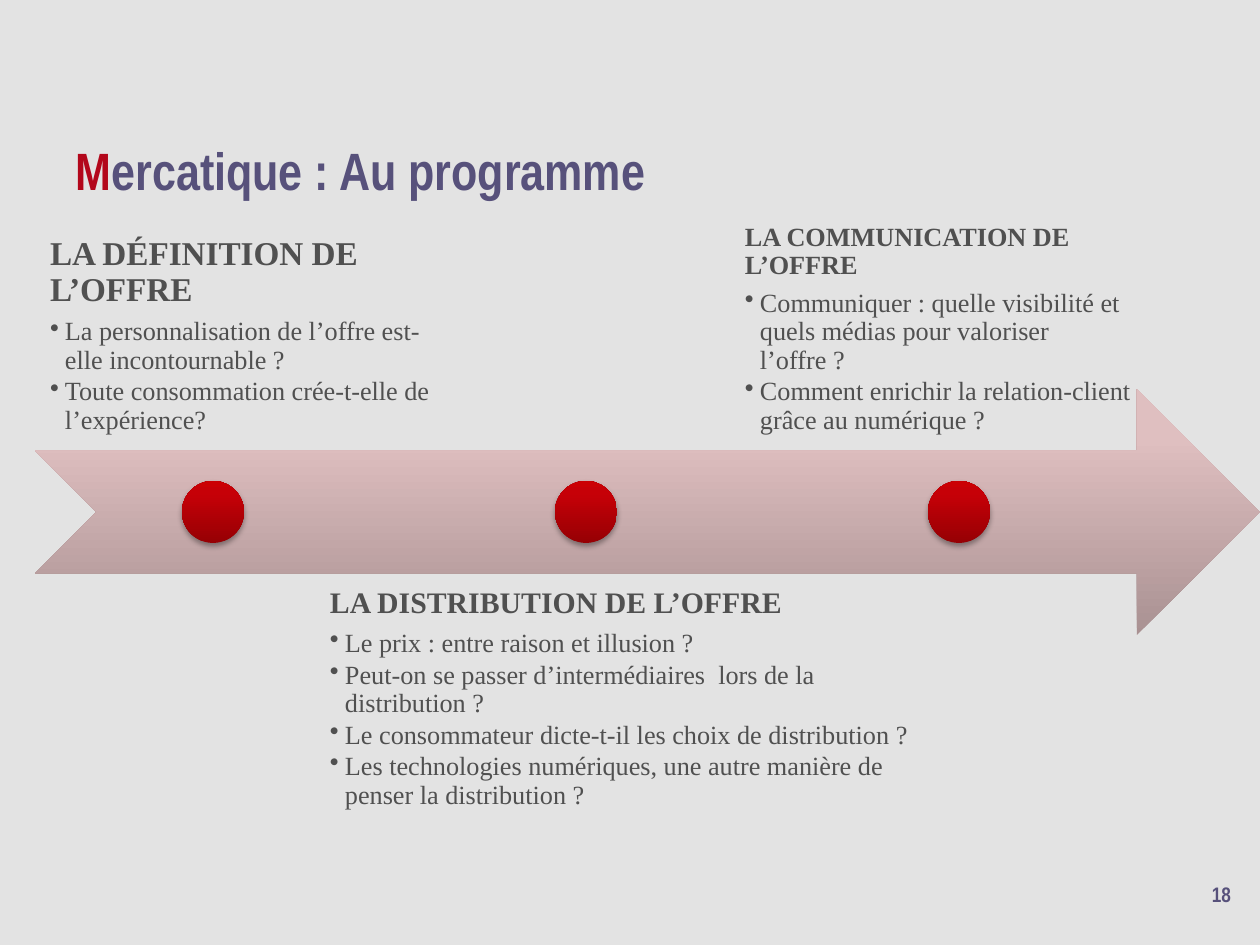
from dataclasses import dataclass

from lxml.etree import SubElement
from pptx import Presentation
from pptx.dml.color import RGBColor
from pptx.enum.shapes import MSO_SHAPE as Shape
from pptx.enum.text import MSO_ANCHOR as Anchor, PP_ALIGN as Align
from pptx.oxml.ns import qn
from pptx.util import Emu, Pt

EMU_PER_PX = 914400 / 126


@dataclass(frozen=True)
class Theme:
    background: str = "E3E3E3"
    initial: str = "B3071B"
    accent: str = "57517B"
    body: str = "505050"
    arrow: tuple = ((0, "A99192"), (80, "DFBFC0"), (100, "E1BFC0"))
    milestone: tuple = ((0, "960004"), (80, "C60007"), (100, "CB0004"))
    title_font: str = "Arial Narrow"
    body_font: str = "Times New Roman"
    title_size: int = 30
    number_size: int = 12
    topic_size: int = 15


THEME = Theme()

# box (left, top, width, height), anchor, heading size, heading, topics
STAGES = [
    ((35, 204, 421, 246), Anchor.BOTTOM, 19, "LA DÉFINITION DE L’OFFRE", [
        "La personnalisation de l’offre est-elle incontournable ?",
        "Toute consommation crée-t-elle de l’expérience?",
    ]),
    ((315, 573, 614, 246), Anchor.TOP, 17, "LA DISTRIBUTION DE L’OFFRE", [
        "Le prix : entre raison et illusion ?",
        "Peut-on se passer d’intermédiaires  lors de la distribution ?",
        "Le consommateur dicte-t-il les choix de distribution ?",
        "Les technologies numériques, une autre manière de penser la distribution ?",
    ]),
    ((730, 204, 421, 246), Anchor.BOTTOM, 15, "LA COMMUNICATION DE L’OFFRE", [
        "Communiquer : quelle visibilité et quels médias pour valoriser l’offre ?",
        "Comment enrichir la relation-client grâce au numérique ?",
    ]),
]


def px(length):
    return Emu(round(length * EMU_PER_PX))


def set_all(target, values):
    for name, value in values.items():
        setattr(target, name, value)


def add_xml(parent, tag, **attributes):
    values = {name: str(value) for name, value in attributes.items()}
    return SubElement(parent, qn(tag), values)


def add_text_frame(slide, box, inset_x, inset_y, anchor=Anchor.TOP):
    frame = slide.shapes.add_textbox(*map(px, box)).text_frame
    set_all(frame, {
        "word_wrap": True, "vertical_anchor": anchor,
        "margin_left": px(inset_x), "margin_right": px(inset_x),
        "margin_top": px(inset_y), "margin_bottom": px(inset_y),
    })
    return frame


def add_run(paragraph, text, font, size, color, bold=True):
    run = paragraph.add_run()
    run.text = text
    set_all(run.font, {"name": font, "size": Pt(size), "bold": bold})
    run.font.color.rgb = RGBColor.from_string(color)


def add_bullet(paragraph):
    properties = paragraph._p.get_or_add_pPr()
    properties.set("marL", str(px(15)))
    properties.set("indent", str(px(-19)))
    bullet_color = add_xml(properties, "a:buClr")
    add_xml(bullet_color, "a:srgbClr", val=THEME.body)
    add_xml(properties, "a:buChar", char="•")


def add_gradient_shape(slide, kind, box, stops):
    """Add a borderless shape whose gradient runs from bottom to top."""
    shape = slide.shapes.add_shape(kind, *map(px, box))
    shape.line.fill.background()
    shape.shadow.inherit = False
    shape.fill.gradient()
    shape.fill.gradient_angle = 90
    stop_list = shape._element.spPr.find(qn("a:gradFill")).find(qn("a:gsLst"))
    for default_stop in list(stop_list):
        stop_list.remove(default_stop)
    for percent, color in stops:
        stop = add_xml(stop_list, "a:gs", pos=percent * 1000)
        add_xml(stop, "a:srgbClr", val=color)
    return shape


def add_milestone(slide, box):
    milestone = add_gradient_shape(slide, Shape.OVAL, box, THEME.milestone)
    effects = milestone._element.spPr.find(qn("a:effectLst"))
    shadow = add_xml(effects, "a:outerShdw", blurRad=Pt(3.1), dist=Pt(1.8),
                     dir=90 * 60000, rotWithShape=0)
    color = add_xml(shadow, "a:srgbClr", val="000000")
    add_xml(color, "a:alpha", val=35000)


def add_stage(slide, box, anchor, heading_size, heading, topics):
    frame = add_text_frame(slide, box, 15, 15, anchor)
    heading_line = frame.paragraphs[0]
    heading_line.line_spacing = 0.9
    add_run(heading_line, heading, THEME.body_font, heading_size, THEME.body)
    for index, topic in enumerate(topics):
        line = frame.add_paragraph()
        add_bullet(line)
        set_all(line, {"level": 1, "line_spacing": 0.9,
                       "space_before": Pt(1.8 if index else 5.6)})
        add_run(line, topic, THEME.body_font, THEME.topic_size, THEME.body, bold=False)


def add_title(slide):
    title = add_text_frame(slide, (63, 95, 1134, 142), 13, 0, Anchor.MIDDLE).paragraphs[0]
    title.line_spacing = 1.1
    for text, color in (("M", THEME.initial), ("ercatique : Au programme", THEME.accent)):
        add_run(title, text, THEME.title_font, THEME.title_size, color)


def add_slide_number(slide):
    number = add_text_frame(slide, (1186, 882, 58, 25), 13, 0).paragraphs[0]
    number.alignment = Align.RIGHT
    add_run(number, "18", THEME.title_font, THEME.number_size, THEME.accent)


def main():
    deck = Presentation()
    set_all(deck, {"slide_width": px(1260), "slide_height": px(945)})
    slide = deck.slides.add_slide(deck.slide_layouts[6])
    slide.background.fill.solid()
    slide.background.fill.fore_color.rgb = RGBColor.from_string(THEME.background)

    add_title(slide)
    add_slide_number(slide)
    add_gradient_shape(slide, Shape.NOTCHED_RIGHT_ARROW, (35, 389, 1225, 246), THEME.arrow)
    for index, stage in enumerate(STAGES):
        add_stage(slide, *stage)
        add_milestone(slide, (182 + 373 * index, 481, 62, 62))
    deck.save("out.pptx")


if __name__ == "__main__":
    main()
